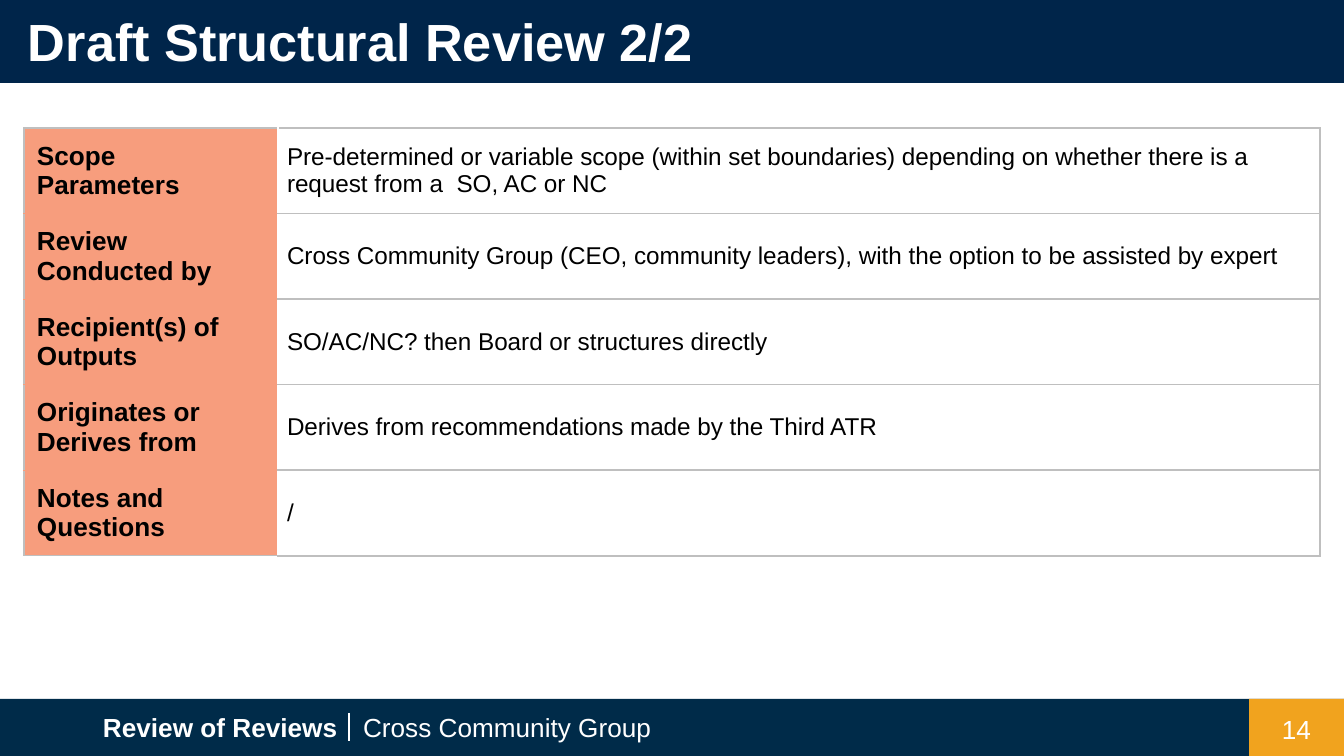
from dataclasses import dataclass

from lxml.etree import SubElement
from pptx import Presentation
from pptx.dml.color import RGBColor
from pptx.enum.shapes import MSO_CONNECTOR, MSO_SHAPE
from pptx.enum.text import MSO_ANCHOR, MSO_AUTO_SIZE, PP_ALIGN
from pptx.oxml.ns import qn
from pptx.util import Emu, Pt


@dataclass(frozen=True)
class Theme:
    font: str = "Arial"
    title_bar: str = "00254A"
    footer_bar: str = "002B49"
    accent: str = "F1A31E"
    label_fill: str = "F79D7D"
    border: str = "BFBFBF"
    light: str = "FFFFFF"
    dark: str = "000000"
    title_size: int = 28
    label_size: int = 14
    body_size: int = 13


THEME = Theme()
EMU_PER_PX = 914400 / 134.4

REVIEW = [
    ("Scope Parameters",
     "Pre-determined or variable scope (within set boundaries) depending on "
     "whether there is a request from a  SO, AC or NC"),
    ("Review Conducted by",
     "Cross Community Group (CEO, community leaders), with the option to be "
     "assisted by expert"),
    ("Recipient(s) of Outputs", "SO/AC/NC? then Board or structures directly"),
    ("Originates or Derives from",
     "Derives from recommendations made by the Third ATR"),
    ("Notes and Questions", "/"),
]


def px(length):
    return Emu(round(length * EMU_PER_PX))


def rgb(color):
    return RGBColor.from_string(color)


def write(frame, text, *, size=THEME.label_size, color=THEME.light,
          bold=False, align=PP_ALIGN.LEFT):
    paragraph = frame.paragraphs[0]
    paragraph.alignment = align
    run = paragraph.add_run()
    run.text = text
    run.font.name = THEME.font
    run.font.size = Pt(size)
    run.font.bold = bold
    run.font.color.rgb = rgb(color)


def set_margins(holder, across, down):
    holder.margin_left = holder.margin_right = px(across)
    holder.margin_top = holder.margin_bottom = px(down)


def add_bar(slide, left, top, width, height, color):
    bar = slide.shapes.add_shape(
        MSO_SHAPE.RECTANGLE, px(left), px(top), px(width), px(height))
    bar.shadow.inherit = False
    bar.fill.solid()
    bar.fill.fore_color.rgb = rgb(color)
    bar.line.fill.background()


def add_label(slide, text, left, top, width, height, **style):
    label = slide.shapes.add_textbox(px(left), px(top), px(width), px(height))
    frame = label.text_frame
    frame.word_wrap = True
    frame.vertical_anchor = MSO_ANCHOR.MIDDLE
    set_margins(frame, 13, 13)
    write(frame, text, **style)


def add_divider(slide, x, top, bottom):
    divider = slide.shapes.add_connector(
        MSO_CONNECTOR.STRAIGHT, px(x), px(top), px(x), px(bottom))
    divider.line.color.rgb = rgb(THEME.light)
    divider.line.width = Pt(1.5)
    SubElement(divider._element.spPr, qn("a:effectLst"))


def format_title(slide, text):
    title = slide.shapes.title
    title.left, title.top = px(15), px(0)
    title.width, title.height = px(1321), px(81)
    frame = title.text_frame
    frame.auto_size = MSO_AUTO_SIZE.NONE
    frame.vertical_anchor = MSO_ANCHOR.MIDDLE
    set_margins(frame, 13, 7)
    write(frame, text, size=THEME.title_size, bold=True)
    slide.shapes._spTree.append(title._element)


def set_borders(cell, **edges):
    properties = cell._tc.get_or_add_tcPr()
    for side in "LRTB":
        if side in edges:
            color, width = edges[side]
            edge = SubElement(properties, qn(f"a:ln{side}"), w=str(Pt(width)))
            fill = SubElement(edge, qn("a:solidFill"))
            SubElement(fill, qn("a:srgbClr"), val=color)


def fill_cell(cell, text, fill, margin, **style):
    cell.fill.solid()
    cell.fill.fore_color.rgb = rgb(fill)
    cell.vertical_anchor = MSO_ANCHOR.MIDDLE
    set_margins(cell, margin, margin)
    write(cell.text_frame, text, color=THEME.dark, **style)


def add_review_table(slide, rows):
    height = px(428)
    table = slide.shapes.add_table(
        len(rows), 2, px(24), px(128), px(1296), height).table
    table.first_row = table.horz_banding = False
    for column, width in zip(table.columns, (254, 1042)):
        column.width = px(width)
    outer = (THEME.border, 0.75)
    inner = (THEME.label_fill, 0.75)
    grid = (THEME.border, 1)
    for index, (heading, detail) in enumerate(rows):
        table.rows[index].height = height // len(rows)
        label, body = table.cell(index, 0), table.cell(index, 1)
        set_borders(label, L=outer, R=inner,
                    T=outer if index == 0 else inner,
                    B=outer if index == len(rows) - 1 else inner)
        set_borders(body, R=grid, T=grid, B=grid)
        fill_cell(label, heading, THEME.label_fill, 13, bold=True)
        fill_cell(body, detail, THEME.light, 9, size=THEME.body_size)


def add_footer(slide):
    add_bar(slide, 0, 699, 1344, 57, THEME.footer_bar)
    add_bar(slide, 1249, 699, 95, 57, THEME.accent)
    add_label(slide, "Review of Reviews", 90, 698, 269, 59, bold=True)
    add_label(slide, "Cross Community Group", 350, 698, 337, 59)
    add_divider(slide, 349, 713, 741)
    add_label(slide, "14", 1249, 700, 95, 58, align=PP_ALIGN.CENTER)


def main():
    presentation = Presentation()
    presentation.slide_width = px(1344)
    presentation.slide_height = px(756)
    slide = presentation.slides.add_slide(presentation.slide_layouts[5])
    add_footer(slide)
    add_bar(slide, 0, 0, 1344, 83, THEME.title_bar)
    format_title(slide, "Draft Structural Review 2/2")
    add_review_table(slide, REVIEW)
    presentation.save("out.pptx")


if __name__ == "__main__":
    main()
